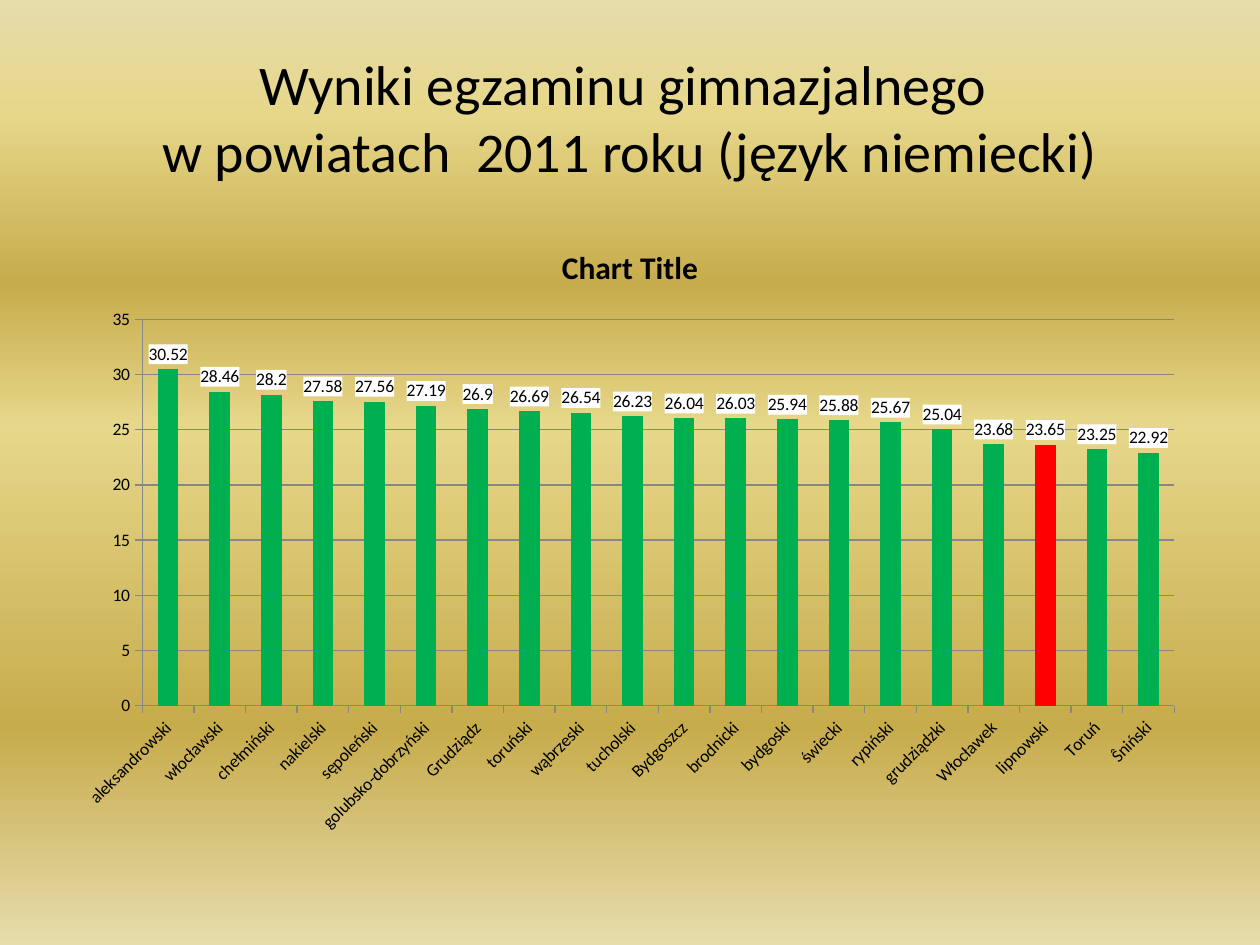
from lxml import etree
from pptx import Presentation
from pptx.chart.data import CategoryChartData
from pptx.dml.color import RGBColor
from pptx.enum.chart import XL_CHART_TYPE, XL_LABEL_POSITION, XL_TICK_MARK
from pptx.enum.text import MSO_ANCHOR, PP_ALIGN
from pptx.oxml import parse_xml
from pptx.oxml.ns import nsdecls, qn
from pptx.util import Emu, Pt

PX = 914400 / 126
FONT = "Calibri"
COLORS = {
    "text": "000000", "bar": "00B050", "highlight": "FF0000",
    "label": "FFFFFF", "line": "878787",
    "pale": "E6DCAC", "light": "E6D78A", "gold": "C7AC4C",
}
STOPS = [(0, "pale"), (12, "light"), (30, "gold"),
         (45, "light"), (77, "gold"), (100, "pale")]
RESULTS = {
    "aleksandrowski": 30.52, "włocławski": 28.46, "chełmiński": 28.2,
    "nakielski": 27.58, "sępoleński": 27.56, "golubsko-dobrzyński": 27.19,
    "Grudziądz": 26.9, "toruński": 26.69, "wąbrzeski": 26.54,
    "tucholski": 26.23, "Bydgoszcz": 26.04, "brodnicki": 26.03,
    "bydgoski": 25.94, "świecki": 25.88, "rypiński": 25.67,
    "grudziądzki": 25.04, "Włocławek": 23.68, "lipnowski": 23.65,
    "Toruń": 23.25, "Ŝniński": 22.92,
}


def px(*values):
    return [Emu(round(v * PX)) for v in values]


def set_font(font, size, bold=False):
    font.name = FONT
    font.size = Pt(size)
    font.bold = bold
    font.color.rgb = RGBColor.from_string(COLORS["text"])


prs = Presentation()
prs.slide_width, prs.slide_height = px(1260, 945)
s = prs.slides.add_slide(prs.slide_layouts[5])

fill = s.background.fill
fill.gradient()
fill.gradient_angle = 270
stops = next(s.element.iter(qn("a:gsLst")))
for gs in list(stops):
    stops.remove(gs)
for pos, name in STOPS:
    gs = etree.SubElement(stops, qn("a:gs"), pos=str(pos * 1000))
    etree.SubElement(gs, qn("a:srgbClr"), val=COLORS[name])

title = s.shapes.title
title.left, title.top, title.width, title.height = px(63, 38, 1134, 157)
tf = title.text_frame
tf.word_wrap = True
tf.vertical_anchor = MSO_ANCHOR.MIDDLE
p = tf.paragraphs[0]
p.text = "Wyniki egzaminu gimnazjalnego \vw powiatach  2011 roku (język niemiecki)"
p.alignment = PP_ALIGN.CENTER
set_font(p.font, 32)

data = CategoryChartData()
data.categories = list(RESULTS)
data.add_series("Series 1", list(RESULTS.values()))
chart = s.shapes.add_chart(
    XL_CHART_TYPE.COLUMN_CLUSTERED, *px(63, 221, 1134, 624), data).chart
set_font(chart.font, 10)
chart.has_legend = False
chart.has_title = True
p = chart.chart_title.text_frame.paragraphs[0]
p.text = "Chart Title"
set_font(p.font, 18, bold=True)
chart.chart_title.include_in_layout = False

plot = chart.plots[0]
plot.vary_by_categories = False
plot.gap_width = 150
bars = plot.series[0]
bars.format.fill.solid()
bars.format.fill.fore_color.rgb = RGBColor.from_string(COLORS["bar"])
point = bars.points[list(RESULTS).index("lipnowski")]
point.format.fill.solid()
point.format.fill.fore_color.rgb = RGBColor.from_string(COLORS["highlight"])

labels = bars.data_labels
labels.show_value = True
labels.position = XL_LABEL_POSITION.OUTSIDE_END
set_font(labels.font, 10)
label_fill = parse_xml(
    f'<c:spPr {nsdecls("c", "a")}><a:solidFill>'
    f'<a:srgbClr val="{COLORS["label"]}"/></a:solidFill></c:spPr>')
next(chart.element.iter(qn("c:dLbls"))).find(qn("c:txPr")).addprevious(label_fill) \
    if hasattr(chart, "element") else \
    labels._element.find(qn("c:txPr")).addprevious(label_fill)

for axis in (chart.category_axis, chart.value_axis):
    axis.major_tick_mark = XL_TICK_MARK.OUTSIDE
    axis.minor_tick_mark = XL_TICK_MARK.NONE
    axis.format.line.color.rgb = RGBColor.from_string(COLORS["line"])
    set_font(axis.tick_labels.font, 10)
chart.category_axis.format.line.width = Pt(0.75)
next(chart.category_axis._element.iter(qn("a:bodyPr"))).set("rot", "-2700000")

values = chart.value_axis
values.minimum_scale, values.maximum_scale, values.major_unit = 0, 35, 5
values.has_major_gridlines = True
values.major_gridlines.format.line.color.rgb = RGBColor.from_string(COLORS["line"])

prs.save("out.pptx")
